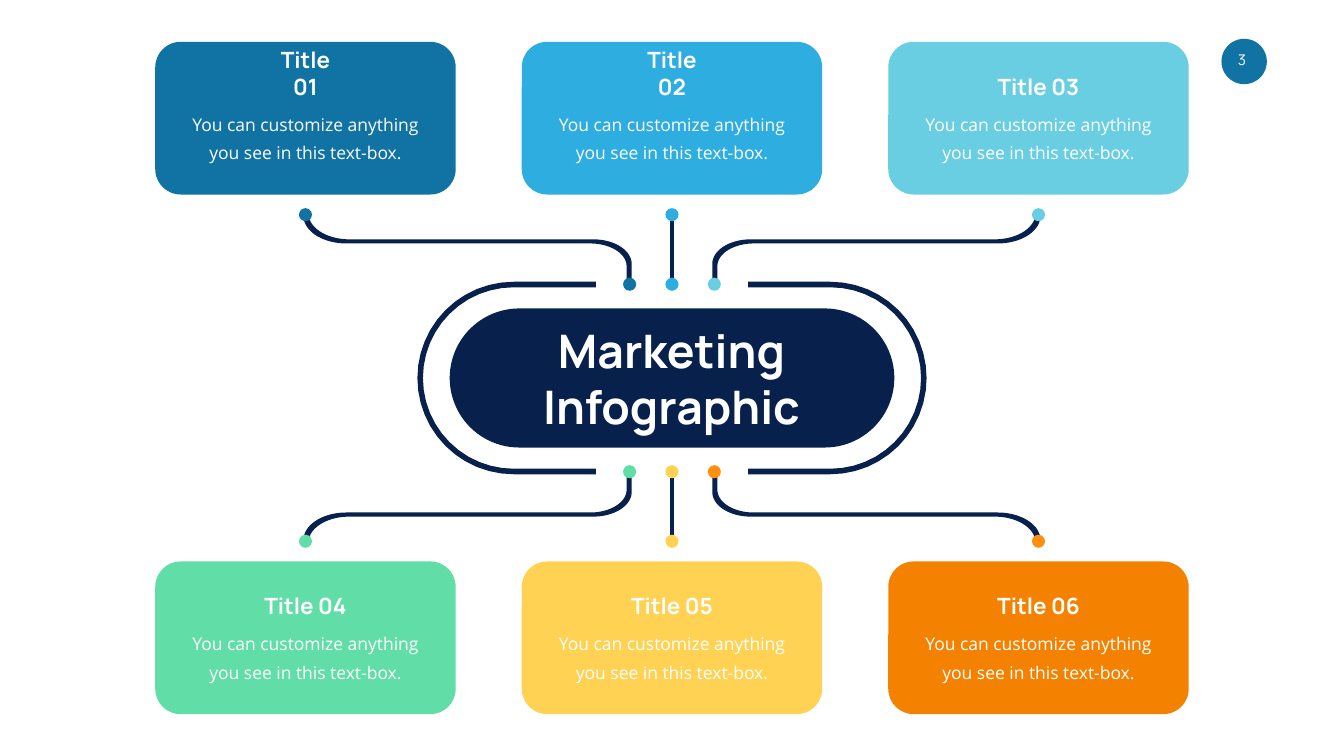
"""Builds a hub slide with six titled cards."""
from dataclasses import dataclass
from math import cos, pi, sin

from pptx import Presentation
from pptx.dml.color import RGBColor as Rgb
from pptx.enum.shapes import MSO_SHAPE as Shape
from pptx.enum.text import MSO_ANCHOR as Anchor, MSO_AUTO_SIZE as Fit, PP_ALIGN as Align
from pptx.util import Inches, Pt


@dataclass(frozen=True)
class Theme:
    """Colours, fonts and type sizes of the slide."""
    navy: str = "08204C"
    white: str = "FFFFFF"
    badge: str = "1073A3"
    cards: tuple = ("1073A3", "2DADE0", "6ACEE3", "61DDA8", "FFD253", "F48200")
    dots: tuple = ("1073A3", "2DADE0", "6ACEE3", "61DDA8", "FFD253", "FF8F10")
    heading: str = "Manrope"
    body: str = "Open Sans"
    hub_size: int = 66
    title_size: int = 32
    body_size: int = 25
    number_size: int = 21


THEME = Theme()
CENTER_X, CENTER_Y = 13.33, 7.5
CARD_PITCH, CARD_WIDTH, CARD_HEIGHT = 7.27, 5.96, 3.03
DOT_PITCH, DOT_SIZE = 0.84, 0.26
OUTER_DOT, INNER_DOT = 3.24, 1.86
CARD_TOPS = (0.83, 11.14)
TITLE_WIDTHS = (1.72, 1.81, 1.84, 1.85, 1.85, 1.85)
BODY_TEXT = "You can customize anything you see in this text-box."


def set_values(target, values):
    """Set each named attribute on the target."""
    for name, value in values.items():
        setattr(target, name, value)


def paint(shape, color, line_width=0):
    """Give a shape a flat fill and an optional line of the same colour."""
    shape.shadow.inherit = False
    shape.fill.solid()
    shape.fill.fore_color.rgb = Rgb.from_string(color)
    if line_width:
        shape.line.color.rgb = Rgb.from_string(color)
        shape.line.width = Pt(line_width)
    else:
        shape.line.fill.background()


def add_block(page, kind, center, size, color):
    """Add a filled preset shape around a centre point."""
    (x, y), (width, height) = center, size
    block = page.shapes.add_shape(
        kind, Inches(x - width / 2), Inches(y - height / 2), Inches(width), Inches(height))
    paint(block, color)
    return block


def add_text(page, place, lines, font, spacing=None, frame=None):
    """Add a centred text box with one paragraph for each line."""
    box = page.shapes.add_textbox(*map(Inches, place))
    set_values(box.text_frame, {
        "word_wrap": True, "auto_size": Fit.SHAPE_TO_FIT_TEXT, **(frame or {})})
    for index, line in enumerate(lines):
        para = box.text_frame.add_paragraph() if index else box.text_frame.paragraphs[0]
        set_values(para, {"alignment": Align.CENTER, **(spacing or {})})
        span = para.add_run()
        span.text = line
        set_values(span.font, font)
        span.font.color.rgb = Rgb.from_string(THEME.white)


def add_outline(page, points, side_x, side_y, line_width=0):
    """Add a closed outline given by offsets from the hub centre, mirrored by side."""
    corners = [(Inches(CENTER_X + side_x * x), Inches(CENTER_Y + side_y * y)) for x, y in points]
    builder = page.shapes.build_freeform(*corners[0])
    builder.add_line_segments(corners[1:], close=True)
    paint(builder.convert_to_shape(), THEME.navy, line_width)


def arc(center, radii, start, end, steps=24):
    """Return points on an elliptical arc between two angles in degrees."""
    angles = [(start + (end - start) * step / steps) * pi / 180 for step in range(steps + 1)]
    return [(center[0] + radii[0] * cos(a), center[1] + radii[1] * sin(a)) for a in angles]


def ribbon(points, shift_x, shift_y):
    """Return the outline between two shifted positions of one line."""
    first = [(x - shift_x, y - shift_y) for x, y in points]
    return first + [(x + shift_x, y + shift_y) for x, y in reversed(points)]


def add_links(page):
    """Add the curved and straight links from the hub to the cards."""
    bend = arc((6.43, -3.24), (0.83, 0.53), 0, 90)
    bend += arc((1.59, -2.24), (0.74, 0.47), 270, 180) + [(0.85, -1.85)]
    stem = [(0, -3.25), (0, -1.84)]
    for side_y in (1, -1):
        add_outline(page, ribbon(stem, 0.02, 0), 1, side_y, 3)
        for side_x in (1, -1):
            add_outline(page, ribbon(bend, 0.03, 0.02), side_x, side_y, 3)


def add_hub(page):
    """Add the central capsule, its two brackets and its heading."""
    capsule = add_block(page, Shape.ROUNDED_RECTANGLE, (CENTER_X, CENTER_Y), (8.82, 2.76), THEME.navy)
    capsule.adjustments[0] = 0.5
    edge, middle = 1.51, (3.14, 0)
    bracket = [(edge, -1.91), *arc(middle, (1.91, 1.91), -90, 90), (edge, 1.91),
               (edge, 1.8), *arc(middle, (1.8, 1.8), 90, -90), (edge, -1.8)]
    for side_x in (1, -1):
        add_outline(page, bracket, side_x, 1)
    add_text(page, (10.49, 6.33, 5.66, 2.34), ("Marketing", "Infographic"),
             {"name": THEME.heading, "size": Pt(THEME.hub_size), "bold": True},
             {"line_spacing": Pt(80)}, {"vertical_anchor": Anchor.MIDDLE})


def add_card(page, index):
    """Add one card with its text and the two dots of its link."""
    row, column = divmod(index, 3)
    offset, side = column - 1, 2 * row - 1
    x, top = CENTER_X + offset * CARD_PITCH, CARD_TOPS[row]
    add_block(page, Shape.ROUNDED_RECTANGLE, (x, top + CARD_HEIGHT / 2),
              (CARD_WIDTH, CARD_HEIGHT), THEME.cards[index])
    for pitch, distance in ((CARD_PITCH, OUTER_DOT), (DOT_PITCH, INNER_DOT)):
        add_block(page, Shape.OVAL, (CENTER_X + offset * pitch, CENTER_Y + side * distance),
                  (DOT_SIZE, DOT_SIZE), THEME.dots[index])
    width = TITLE_WIDTHS[index]
    add_text(page, (x - width / 2, top + 0.56, width, 0.64), (f"Title {index + 1:02}",),
             {"name": THEME.heading, "size": Pt(THEME.title_size), "bold": True},
             frame={"vertical_anchor": Anchor.BOTTOM})
    add_text(page, (x - 2.38, top + 1.22, 4.76, 1.25), (BODY_TEXT,),
             {"name": THEME.body, "size": Pt(THEME.body_size)},
             {"line_spacing": Pt(41), "space_before": Pt(5)},
             {"margin_bottom": Inches(0.1)})


def add_page_number(page):
    """Add the round badge with the page number."""
    add_block(page, Shape.OVAL, (24.68, 1.22), (0.9, 0.9), THEME.badge)
    add_text(page, (24.32, 0.9, 0.79, 0.61), ("3",),
             {"name": THEME.heading, "size": Pt(THEME.number_size)},
             frame={"margin_top": Inches(0.1), "margin_bottom": Inches(0.1),
                    "margin_right": Inches(0.26)})


def main():
    """Build the slide and save the deck."""
    deck = Presentation()
    set_values(deck, {"slide_width": Inches(26.66), "slide_height": Inches(15)})
    page = deck.slides.add_slide(deck.slide_layouts[6])
    add_page_number(page)
    add_links(page)
    add_hub(page)
    for index in range(len(THEME.cards)):
        add_card(page, index)
    deck.save("out.pptx")


if __name__ == "__main__":
    main()
